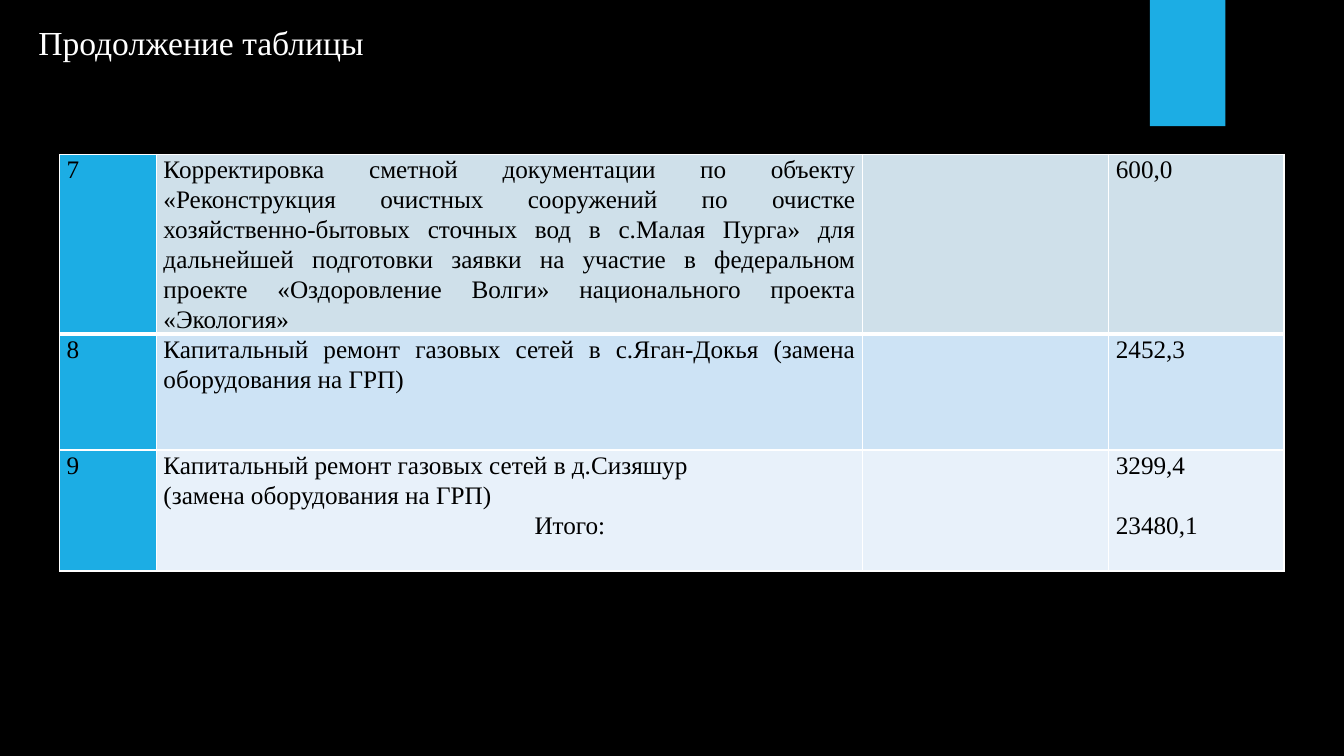
from dataclasses import dataclass

from lxml import etree
from pptx import Presentation
from pptx.dml.color import RGBColor
from pptx.enum.shapes import MSO_SHAPE
from pptx.enum.text import MSO_ANCHOR, MSO_AUTO_SIZE, PP_ALIGN
from pptx.oxml.ns import qn
from pptx.util import Cm, Pt

RECTANGLE = MSO_SHAPE.RECTANGLE
TOP = MSO_ANCHOR.TOP
NO_AUTOFIT = MSO_AUTO_SIZE.NONE
LEFT = PP_ALIGN.LEFT
JUSTIFY = PP_ALIGN.JUSTIFY


@dataclass(frozen=True)
class Theme:
    font: str = "Times New Roman"
    title_size: int = 24
    table_size: int = 18
    background: str = "000000"
    title: str = "FFFFFF"
    text: str = "000000"
    accent: str = "1CADE4"
    border: str = "FFFFFF"
    row_fills: tuple = ("CFE0EA", "CDE3F5", "E8F1FA")
    thin_line: int = 1
    thick_line: int = 3


THEME = Theme()
COLUMN_WIDTHS = (2.44, 17.8, 6.2, 4.42)
ROW_HEIGHTS = (4.53, 2.92, 3.05)
TOTAL_INDENT = 9.35
TOTAL_GAP = 21.5

ROWS = (
    (
        ["7"],
        ["Корректировка сметной документации по объекту «Реконструкция очистных "
         "сооружений по очистке хозяйственно-бытовых сточных вод в с.Малая Пурга» "
         "для дальнейшей подготовки заявки на участие в федеральном проекте "
         "«Оздоровление Волги» национального проекта «Экология»"],
        [],
        ["600,0"],
    ),
    (
        ["8"],
        ["Капитальный ремонт газовых сетей в с.Яган-Докья "
         "(замена оборудования на ГРП)"],
        [],
        ["2452,3"],
    ),
    (
        ["9"],
        ["Капитальный ремонт газовых сетей в д.Сизяшур",
         "(замена оборудования на ГРП)",
         "Итого:"],
        [],
        ["3299,4", "23480,1"],
    ),
)


def apply_format(target, values):
    for name, value in values.items():
        setattr(target, name, value)


def set_fill(fill, color):
    fill.solid()
    fill.fore_color.rgb = RGBColor.from_string(color)


def format_font(paragraph, size, color):
    apply_format(paragraph.font, {"name": THEME.font, "size": Pt(size)})
    paragraph.font.color.rgb = RGBColor.from_string(color)


def add_title(slide, text):
    title = slide.shapes.title
    apply_format(title, {"left": Cm(0.71), "top": Cm(0.43),
                         "width": Cm(29.21), "height": Cm(12.09)})
    frame = title.text_frame
    apply_format(frame, {"text": text, "word_wrap": True,
                         "vertical_anchor": TOP, "auto_size": NO_AUTOFIT})
    paragraph = frame.paragraphs[0]
    paragraph.alignment = LEFT
    format_font(paragraph, THEME.title_size, THEME.title)


def add_accent_bar(slide):
    shape = slide.shapes.add_shape(RECTANGLE, Cm(28.98), Cm(0), Cm(1.9), Cm(3.18))
    shape.shadow.inherit = False
    set_fill(shape.fill, THEME.accent)
    shape.line.fill.background()


def set_borders(cell, widths):
    properties = cell._tc.get_or_add_tcPr()
    for position, (side, width) in enumerate(widths.items()):
        line = etree.Element(qn(f"a:ln{side}"), w=str(Pt(width)))
        fill = etree.SubElement(line, qn("a:solidFill"))
        etree.SubElement(fill, qn("a:srgbClr"), val=THEME.border)
        properties.insert(position, line)


def write_cell(cell, lines):
    apply_format(cell, {"margin_left": Cm(0.18), "margin_right": Cm(0.18),
                        "margin_top": Cm(0), "margin_bottom": Cm(0),
                        "vertical_anchor": TOP})
    frame = cell.text_frame
    frame.text = "\n".join(lines)
    for paragraph in frame.paragraphs:
        apply_format(paragraph, {"alignment": JUSTIFY, "line_spacing": 1.07})
        format_font(paragraph, THEME.table_size, THEME.text)


def add_cost_table(slide):
    table = slide.shapes.add_table(
        len(ROWS), len(COLUMN_WIDTHS), Cm(1.5), Cm(3.89),
        Cm(sum(COLUMN_WIDTHS)), Cm(sum(ROW_HEIGHTS))).table
    apply_format(table, {"first_row": False, "horz_banding": False})
    for column, width in zip(table.columns, COLUMN_WIDTHS):
        column.width = Cm(width)
    for row_index, (cells, height) in enumerate(zip(ROWS, ROW_HEIGHTS)):
        table.rows[row_index].height = Cm(height)
        thin, thick = THEME.thin_line, THEME.thick_line
        borders = {"L": thin, "R": thin,
                   "T": thick if row_index == 1 else thin,
                   "B": thick if row_index == 0 else thin}
        for column_index, lines in enumerate(cells):
            cell = table.cell(row_index, column_index)
            write_cell(cell, lines)
            set_fill(cell.fill, THEME.row_fills[row_index] if column_index else THEME.accent)
            set_borders(cell, borders)
    return table


def format_total(table):
    last_row = len(ROWS) - 1
    label = table.cell(last_row, 1).text_frame.paragraphs[-1]
    label.alignment = LEFT
    label._p.get_or_add_pPr().set("marL", str(Cm(TOTAL_INDENT)))
    amount = table.cell(last_row, 3).text_frame.paragraphs[-1]
    amount.space_before = Pt(TOTAL_GAP)


def main():
    presentation = Presentation()
    apply_format(presentation, {"slide_width": Cm(33.87), "slide_height": Cm(19.05)})
    slide = presentation.slides.add_slide(presentation.slide_layouts.get_by_name("Title Only"))
    set_fill(slide.background.fill, THEME.background)
    add_accent_bar(slide)
    add_title(slide, "Продолжение таблицы")
    format_total(add_cost_table(slide))
    presentation.save("out.pptx")


if __name__ == "__main__":
    main()
